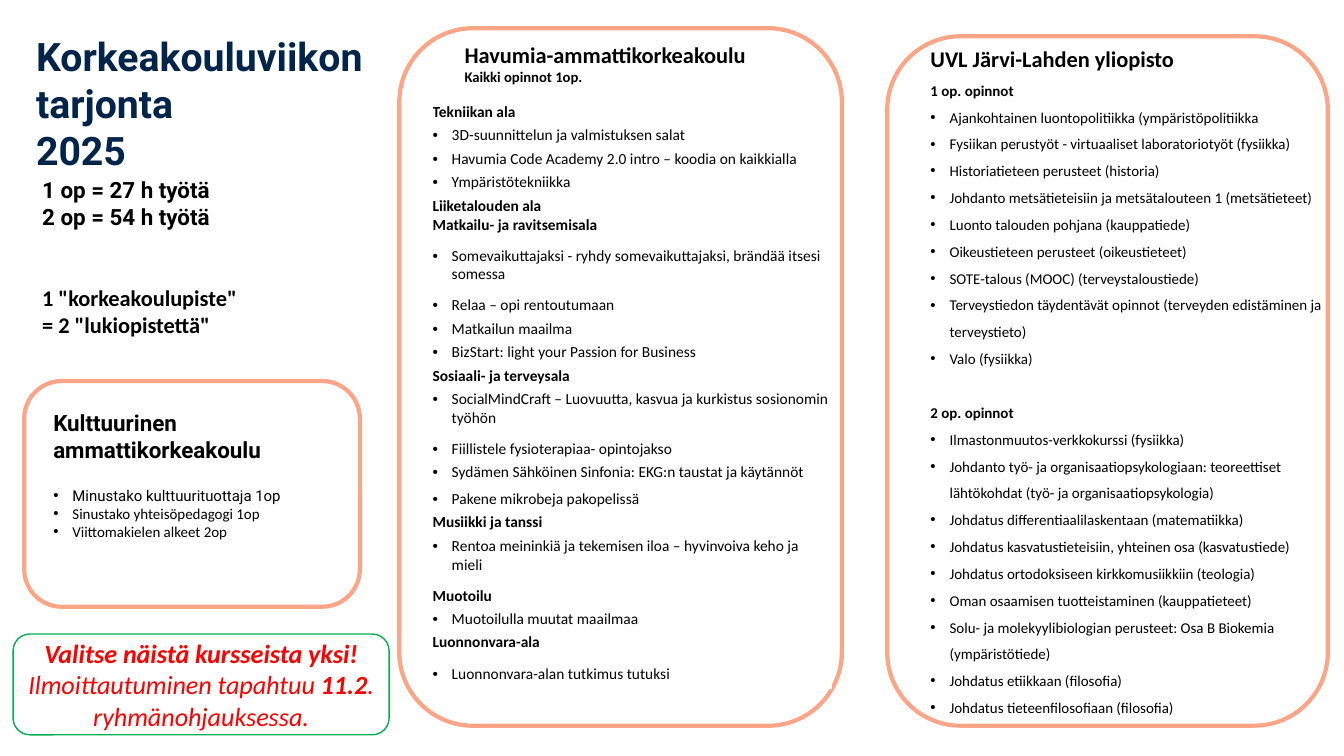
from dataclasses import dataclass
from typing import Optional, Sequence

from lxml import etree
from pptx import Presentation
from pptx import util as u
from pptx.dml.color import RGBColor
from pptx.enum import shapes, text
from pptx.oxml import ns


@dataclass(frozen=True)
class Theme:
    navy: str = "00244A"
    black: str = "000000"
    white: str = "FFFFFF"
    peach: str = "FDA586"
    green: str = "00B050"
    red: str = "FF0000"
    heading_font: str = "Roboto"
    body_font: str = "Calibri"
    title_size: float = 28
    call_size: float = 18.67
    heading_size: float = 16
    course_size: float = 11
    small_size: float = 10.67
    note_size: float = 10.5
    panel_line: float = 3
    call_line: float = 1


THEME = Theme()


@dataclass(frozen=True)
class Box:
    left: float
    top: float
    width: float
    height: float

    def lengths(self) -> list[u.Length]:
        return [u.Inches(n) for n in (self.left, self.top, self.width, self.height)]


@dataclass(frozen=True)
class Line:
    words: str
    size: float = THEME.small_size
    font: str = THEME.body_font
    color: str = THEME.black
    bold: bool = False
    bullet: bool = False
    before: float = 0
    spacing: Optional[float | u.Length] = None


@dataclass(frozen=True)
class TextBlock:
    box: Box
    lines: Sequence[Line]


@dataclass(frozen=True)
class CourseRow:
    height: float
    lines: Sequence[Line]
    filled: bool = True


def style_run(run, size: float, font: str, color: str, bold: bool) -> None:
    run.font.size = u.Pt(size)
    run.font.name = font
    run.font.color.rgb = RGBColor.from_string(color)
    run.font.bold = bold


def write_lines(frame, lines: Sequence[Line]) -> None:
    frame.word_wrap = True
    frame.text = "\n".join(line.words for line in lines)
    for paragraph, line in zip(frame.paragraphs, lines):
        if line.spacing:
            paragraph.line_spacing = line.spacing
        if line.before:
            paragraph.space_before = u.Pt(line.before)
        if line.bullet:
            properties = paragraph._p.get_or_add_pPr()
            properties.set("marL", str(u.Inches(0.19)))
            properties.set("indent", str(u.Inches(-0.19)))
            etree.SubElement(properties, ns.qn("a:buFont")).set("typeface", "Arial")
            etree.SubElement(properties, ns.qn("a:buChar")).set("char", "•")
        for run in paragraph.runs:
            style_run(run, line.size, line.font, line.color, line.bold)


def add_panel(slide, box: Box, line_color: str, line_width: float):
    panel = slide.shapes.add_shape(shapes.MSO_SHAPE.ROUNDED_RECTANGLE, *box.lengths())
    panel.shadow.inherit = False
    panel.fill.background()
    panel.line.color.rgb = RGBColor.from_string(line_color)
    panel.line.width = u.Pt(line_width)
    return panel


def add_text(slide, block: TextBlock) -> None:
    frame = slide.shapes.add_textbox(*block.box.lengths()).text_frame
    write_lines(frame, block.lines)
    frame.auto_size = text.MSO_AUTO_SIZE.SHAPE_TO_FIT_TEXT


def add_courses(slide, box: Box, rows: Sequence[CourseRow]) -> None:
    table = slide.shapes.add_table(len(rows), 1, *box.lengths()).table
    table.first_row = table.horz_banding = False
    stretch = box.height / sum(row.height for row in rows)
    for table_row, row in zip(table.rows, rows):
        table_row.height = u.Inches(row.height * stretch)
        cell = table_row.cells[0]
        cell.margin_left = cell.margin_right = cell.margin_top = cell.margin_bottom = 0
        if row.filled:
            cell.fill.solid()
            cell.fill.fore_color.rgb = RGBColor.from_string(THEME.white)
        else:
            cell.fill.background()
        write_lines(cell.text_frame, row.lines)


def add_call(slide, box: Box, sentences: Sequence[Sequence[tuple[str, bool]]]) -> None:
    call = add_panel(slide, box, THEME.green, THEME.call_line)
    call.fill.solid()
    call.fill.fore_color.rgb = RGBColor.from_string(THEME.white)
    frame = call.text_frame
    frame.word_wrap = True
    frame.vertical_anchor = text.MSO_ANCHOR.MIDDLE
    for index, sentence in enumerate(sentences):
        paragraph = frame.add_paragraph() if index else frame.paragraphs[0]
        paragraph.alignment = text.PP_ALIGN.CENTER
        for words, bold in sentence:
            run = paragraph.add_run()
            run.text = words
            style_run(run, THEME.call_size, THEME.body_font, THEME.red, bold)
            run.font.italic = True


def heading(words: str, font: str = THEME.heading_font, before: float = 0) -> Line:
    return Line(words, THEME.heading_size, font, bold=True, before=before)


def field(*names: str, height: float = 0.23, filled: bool = True) -> CourseRow:
    lines = [Line(name, THEME.course_size, bold=True, spacing=u.Pt(13.5)) for name in names]
    return CourseRow(height, lines, filled)


def course(name: str, height: float = 0.23) -> CourseRow:
    return CourseRow(height, [Line(name, THEME.course_size, bullet=True, spacing=u.Pt(13.5))])


def university_courses(*names: str) -> list[Line]:
    return [Line(name, bullet=True, spacing=1.5) for name in names]


PANELS = [Box(8.8, 0.36, 4.37, 6.84), Box(3.96, 0.28, 4.39, 6.92), Box(0.24, 3.78, 3.33, 2.24)]

TEXTS = [
    TextBlock(Box(0.26, 0.27, 3.7, 1.74), [
        Line(words, THEME.title_size, THEME.heading_font, THEME.navy, True)
        for words in ("Korkeakouluviikon tarjonta", "2025")]),
    TextBlock(Box(0.32, 1.7, 3.16, 1.95), [
        heading("1 op = 27 h työtä"),
        heading("2 op = 54 h työtä"),
        heading('1 "korkeakoulupiste"', THEME.body_font, before=38.5),
        heading('= 2 "lukiopistettä"', THEME.body_font)]),
    TextBlock(Box(0.43, 4.01, 2.91, 1.88), [
        heading("Kulttuurinen ammattikorkeakoulu"),
        Line("Minustako kulttuurituottaja 1op", font=THEME.heading_font, bullet=True, before=17),
        Line("Sinustako yhteisöpedagogi 1op", bullet=True),
        Line("Viittomakielen alkeet 2op", bullet=True)]),
    TextBlock(Box(4.51, 0.36, 3.32, 1.23), [
        heading("Havumia-ammattikorkeakoulu", THEME.body_font),
        Line("Kaikki opinnot 1op.", THEME.note_size, bold=True)]),
    TextBlock(Box(9.13, 0.27, 4.19, 7.54), [
        Line("UVL Järvi-Lahden yliopisto", THEME.heading_size, bold=True, spacing=1.5),
        Line("1 op. opinnot", bold=True, spacing=1.5),
        *university_courses(
            "Ajankohtainen luontopolitiikka (ympäristöpolitiikka",
            "Fysiikan perustyöt - virtuaaliset laboratoriotyöt (fysiikka)",
            "Historiatieteen perusteet (historia)",
            "Johdanto metsätieteisiin ja metsätalouteen 1 (metsätieteet)",
            "Luonto talouden pohjana (kauppatiede)",
            "Oikeustieteen perusteet (oikeustieteet)",
            "SOTE-talous (MOOC) (terveystaloustiede)",
            "Terveystiedon täydentävät opinnot (terveyden edistäminen ja terveystieto)",
            "Valo (fysiikka)"),
        Line("2 op. opinnot", bold=True, before=19.3, spacing=1.5),
        *university_courses(
            "Ilmastonmuutos-verkkokurssi (fysiikka)",
            "Johdanto työ- ja organisaatiopsykologiaan: teoreettiset lähtökohdat "
            "(työ- ja organisaatiopsykologia)",
            "Johdatus differentiaalilaskentaan (matematiikka)",
            "Johdatus kasvatustieteisiin, yhteinen osa (kasvatustiede)",
            "Johdatus ortodoksiseen kirkkomusiikkiin (teologia)",
            "Oman osaamisen tuotteistaminen (kauppatieteet)",
            "Solu- ja molekyylibiologian perusteet: Osa B Biokemia (ympäristötiede)",
            "Johdatus etiikkaan (filosofia)",
            "Johdatus tieteenfilosofiaan (filosofia)")]),
]

COURSES = [
    field("Tekniikan ala"),
    course("3D-suunnittelun ja valmistuksen salat"),
    course("Havumia Code Academy 2.0 intro – koodia on kaikkialla"),
    course("Ympäristötekniikka"),
    field("Liiketalouden ala", "Matkailu- ja ravitsemisala", height=0.49),
    course("Somevaikuttajaksi - ryhdy somevaikuttajaksi, brändää itsesi somessa", 0.49),
    course("Relaa – opi rentoutumaan"),
    course("Matkailun maailma"),
    course("BizStart: light your Passion for Business"),
    field("Sosiaali- ja terveysala", filled=False),
    course("SocialMindCraft – Luovuutta, kasvua ja kurkistus sosionomin työhön", 0.49),
    course("Fiillistele fysioterapiaa- opintojakso"),
    course("Sydämen Sähköinen Sinfonia: EKG:n taustat ja käytännöt", 0.26),
    course("Pakene mikrobeja pakopelissä"),
    field("Musiikki ja tanssi"),
    course("Rentoa meininkiä ja tekemisen iloa – hyvinvoiva keho ja mieli", 0.49),
    field("Muotoilu"),
    course("Muotoilulla muutat maailmaa"),
    field("Luonnonvara-ala", height=0.31),
    course("Luonnonvara-alan tutkimus tutuksi"),
]

CALL = [
    [("Valitse näistä kursseista yksi!", True)],
    [("Ilmoittautuminen tapahtuu ", False), ("11.2", True), (". ryhmänohjauksessa.", False)],
]


def main() -> None:
    deck = Presentation()
    deck.slide_width, deck.slide_height = u.Inches(13.33), u.Inches(7.5)
    slide = deck.slides.add_slide(deck.slide_layouts[6])
    for box in PANELS:
        add_panel(slide, box, THEME.peach, THEME.panel_line)
    for block in TEXTS:
        add_text(slide, block)
    add_courses(slide, Box(4.29, 1.02, 3.96, 5.81), COURSES)
    add_call(slide, Box(0.13, 6.29, 3.73, 1), CALL)
    deck.save("out.pptx")


if __name__ == "__main__":
    main()
